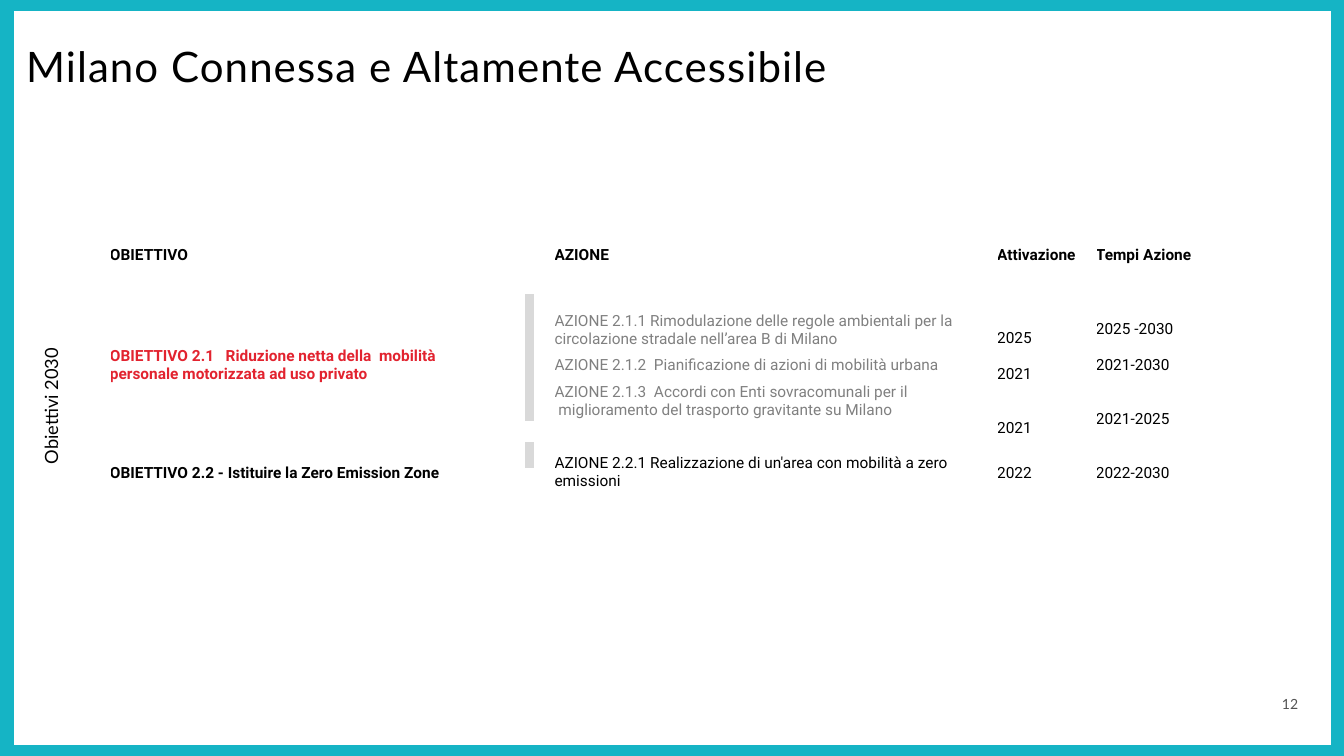
from lxml.etree import SubElement
from pptx import Presentation
from pptx.dml.color import RGBColor
from pptx.enum.shapes import MSO_CONNECTOR, MSO_SHAPE
from pptx.enum.text import MSO_ANCHOR, PP_ALIGN
from pptx.oxml.ns import qn
from pptx.util import Inches, Pt

COLORS = {
    "frame": "15B4C5",
    "text": "000000",
    "number": "535353",
    "highlight": "E2232F",
    "muted": "808080",
    "bar": "D9D9D9",
}
COLUMN_WIDTHS = [3.84, 0.57, 4.39, 0.98, 1.07]
ROW_HEIGHTS = [0.61, 1.57, 0.56]
HEADERS = ["OBIETTIVO", "", "AZIONE", "Attivazione", "Tempi Azione"]
ACTIONS = [
    "AZIONE 2.1.1 Rimodulazione delle regole ambientali per la circolazione stradale nell’area B di Milano",
    "AZIONE 2.1.2  Pianificazione di azioni di mobilità urbana",
    "AZIONE 2.1.3  Accordi con Enti sovracomunali per il\v miglioramento del trasporto gravitante su Milano",
]
ONE_LINE = 12.9  # height of a table text line in points


def rgb(color):
    return RGBColor.from_string(COLORS[color])


def style_runs(paragraph, font, size, color, bold=False):
    for run in paragraph.runs:
        run.font.name = font
        run.font.size = Pt(size)
        run.font.bold = bold
        run.font.color.rgb = rgb(color)


def add_frame(slide):
    frame = slide.shapes.add_shape(
        MSO_SHAPE.RECTANGLE, Inches(0.01), Inches(-0.02), Inches(13.32), Inches(7.54))
    frame.shadow.inherit = False
    frame.fill.background()
    frame.line.color.rgb = rgb("frame")
    frame.line.width = Pt(19)


def add_label(slide, text, box, size, color="text", align=PP_ALIGN.LEFT,
              rotation=0, wrap=True):
    label = slide.shapes.add_textbox(*map(Inches, box))
    label.rotation = rotation
    frame = label.text_frame
    frame.word_wrap = wrap
    frame.margin_left = frame.margin_right = frame.margin_top = frame.margin_bottom = 0
    frame.text = text
    paragraph = frame.paragraphs[0]
    paragraph.alignment = align
    style_runs(paragraph, "Lato", size, color)
    return paragraph


def fill_cell(cell, lines, color="text", bold=False, gaps=(), top=0):
    """Write one paragraph per line; gaps are the points between paragraphs."""
    cell.fill.background()
    cell.vertical_anchor = MSO_ANCHOR.MIDDLE
    cell.margin_left = cell.margin_right = cell.margin_bottom = 0
    cell.margin_top = Inches(top)
    for index, line in enumerate(lines):
        frame = cell.text_frame
        paragraph = frame.add_paragraph() if index else frame.paragraphs[0]
        paragraph.text = line
        if index:
            paragraph.space_before = Pt(gaps[index - 1])
        style_runs(paragraph, "Roboto", 11, color, bold)


def add_objectives_table(slide):
    table = slide.shapes.add_table(
        len(ROW_HEIGHTS), len(COLUMN_WIDTHS), Inches(1.09), Inches(2.23),
        Inches(sum(COLUMN_WIDTHS)), Inches(sum(ROW_HEIGHTS))).table
    table.first_row = table.horz_banding = False
    for column, width in zip(table.columns, COLUMN_WIDTHS):
        column.width = Inches(width)
    for row, height in zip(table.rows, ROW_HEIGHTS):
        row.height = Inches(height)

    date_gaps = (ONE_LINE, 2 * ONE_LINE)
    rows = [
        [dict(lines=[header], bold=True) for header in HEADERS],
        [
            dict(lines=["OBIETTIVO 2.1   Riduzione netta della  mobilità "
                        "personale motorizzata ad uso privato"],
                 color="highlight", bold=True),
            dict(lines=[]),
            dict(lines=ACTIONS, color="muted", gaps=(6, 6)),
            dict(lines=["2025", "2021", "2021"], gaps=date_gaps, top=0.36),
            dict(lines=["2025 -2030", "2021-2030", "2021-2025"], gaps=date_gaps, top=0.18),
        ],
        [
            dict(lines=["OBIETTIVO 2.2 - Istituire la Zero Emission Zone"], bold=True),
            dict(lines=[]),
            dict(lines=["AZIONE 2.2.1 Realizzazione di un'area con mobilità a zero emissioni"]),
            dict(lines=["2022"]),
            dict(lines=["2022-2030"]),
        ],
    ]
    for row, contents in zip(table.rows, rows):
        for cell, content in zip(row.cells, contents):
            fill_cell(cell, **content)


def add_bar(slide, top, bottom):
    bar = slide.shapes.add_connector(
        MSO_CONNECTOR.STRAIGHT, Inches(5.25), Inches(top), Inches(5.25), Inches(bottom))
    bar.line.color.rgb = rgb("bar")
    bar.line.width = Pt(6)
    SubElement(bar._element.spPr, qn("a:effectLst"))


def main():
    presentation = Presentation()
    presentation.slide_width = Inches(13.33)
    presentation.slide_height = Inches(7.5)
    slide = presentation.slides.add_slide(presentation.slide_layouts[6])

    add_frame(slide)
    add_label(slide, "12", (12.67, 6.9, 0.25, 0.17), 10, "number", PP_ALIGN.CENTER, wrap=False)
    add_objectives_table(slide)
    for top, bottom in ((2.92, 4.18), (4.39, 4.64)):
        add_bar(slide, top, bottom)
    title = add_label(slide, "Milano Connessa e Altamente Accessibile",
                      (0.26, 0.4, 10.36, 0.5), 30)
    title.runs[0].font._element.set("spc", "80")
    add_label(slide, "Obiettivi 2030", (-2.07, 3.92, 5.15, 0.22), 13,
              align=PP_ALIGN.CENTER, rotation=270)

    presentation.save("out.pptx")


if __name__ == "__main__":
    main()
